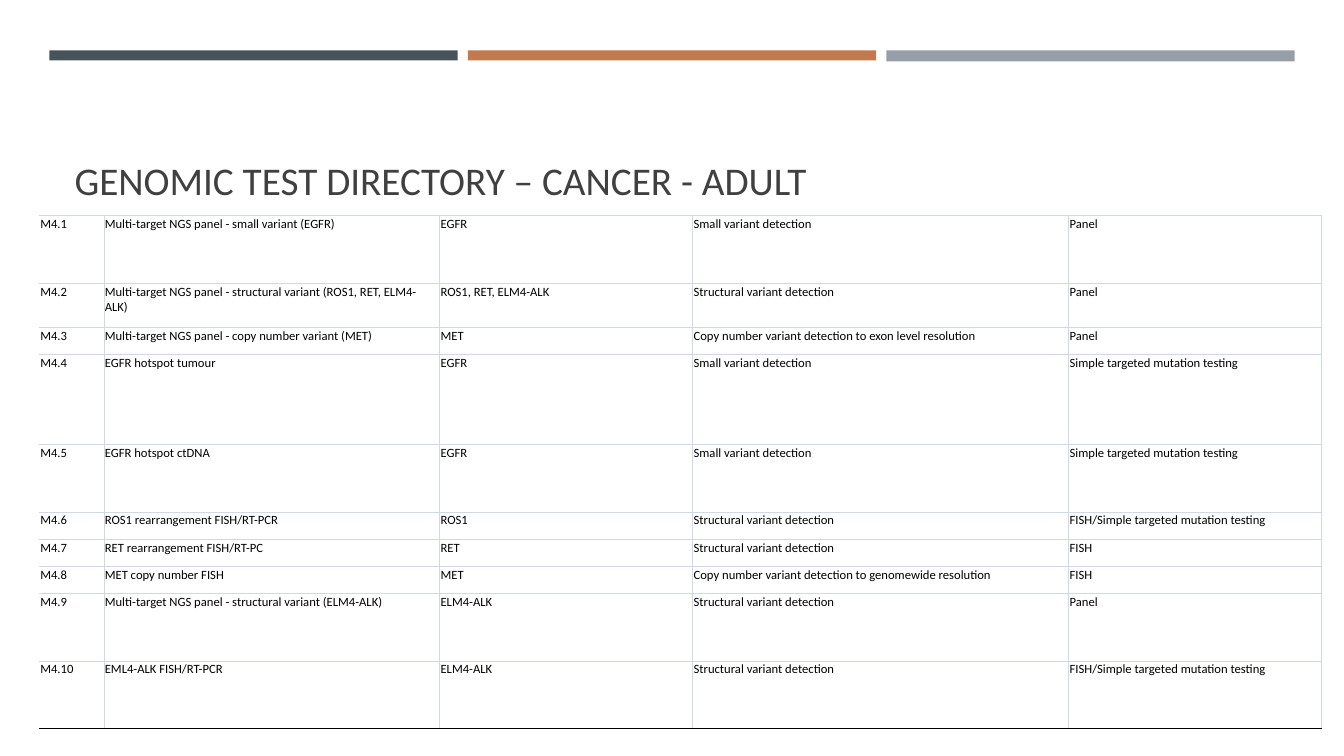
from lxml import etree
from pptx import Presentation
from pptx.dml.color import RGBColor
from pptx.enum.shapes import MSO_SHAPE
from pptx.enum.text import MSO_ANCHOR, PP_ALIGN
from pptx.oxml.ns import qn
from pptx.util import Inches, Pt

SLATE = RGBColor(0x46, 0x53, 0x59)
ORANGE = RGBColor(0xC3, 0x78, 0x4D)
GREY = RGBColor(0x96, 0x9F, 0xA7)
TITLE_GREY = RGBColor(0x40, 0x40, 0x40)
BLACK = RGBColor(0, 0, 0)
GRID_BLUE = RGBColor(0xD0, 0xD7, 0xE5)

NO_STYLE = "{2D5ABB26-0587-4C30-8999-92F81FD0307C}"
BORDER_WIDTH = Pt(0.5)
BAR_WIDTH, BAR_STEP = 4.05, 4.15

COLUMN_WIDTHS = [0.64, 3.33, 2.51, 3.73, 2.51]
ROW_HEIGHTS = [0.67, 0.44, 0.27, 0.89, 0.67, 0.27, 0.27, 0.27, 0.67, 0.67]
SMALL = "Small variant detection"
STRUCTURAL = "Structural variant detection"
COPY_NUMBER = "Copy number variant detection to"
TARGETED = "Simple targeted mutation testing"
TESTS = [
    ("Multi-target NGS panel - small variant (EGFR)", "EGFR", SMALL, "Panel"),
    ("Multi-target NGS panel - structural variant (ROS1, RET, ELM4-ALK)",
     "ROS1, RET, ELM4-ALK", STRUCTURAL, "Panel"),
    ("Multi-target NGS panel - copy number variant (MET)", "MET",
     f"{COPY_NUMBER} exon level resolution", "Panel"),
    ("EGFR hotspot tumour", "EGFR", SMALL, TARGETED),
    ("EGFR hotspot ctDNA", "EGFR", SMALL, TARGETED),
    ("ROS1 rearrangement FISH/RT-PCR", "ROS1", STRUCTURAL, f"FISH/{TARGETED}"),
    ("RET rearrangement FISH/RT-PC", "RET", STRUCTURAL, "FISH"),
    ("MET copy number FISH", "MET", f"{COPY_NUMBER} genomewide resolution", "FISH"),
    ("Multi-target NGS panel - structural variant (ELM4-ALK)", "ELM4-ALK",
     STRUCTURAL, "Panel"),
    ("EML4-ALK FISH/RT-PCR", "ELM4-ALK", STRUCTURAL, f"FISH/{TARGETED}"),
]


def write_text(text_frame, text, size, color, font="Calibri"):
    paragraph = text_frame.paragraphs[0]
    paragraph.alignment = PP_ALIGN.LEFT
    run = paragraph.add_run()
    run.text = text
    run.font.name = font
    run.font.size = Pt(size)
    run.font.color.rgb = color


def set_borders(cell, **colors):
    """Draw the sides L, R, T, B; a side whose colour is None is hidden."""
    properties = cell._tc.get_or_add_tcPr()
    for side in "LRTB":
        line = etree.SubElement(properties, qn(f"a:ln{side}"), w=str(BORDER_WIDTH))
        color = colors[side]
        if color is None:
            etree.SubElement(line, qn("a:noFill"))
        else:
            fill = etree.SubElement(line, qn("a:solidFill"))
            etree.SubElement(fill, qn("a:srgbClr"), val=str(color))


class SlideBuilder:
    def __init__(self, presentation):
        self.slide = presentation.slides.add_slide(presentation.slide_layouts[5])

    def bar(self, left, color, height):
        shape = self.slide.shapes.add_shape(
            MSO_SHAPE.RECTANGLE, Inches(left), Inches(0.5),
            Inches(BAR_WIDTH), Inches(height))
        shape.shadow.inherit = False
        shape.fill.solid()
        shape.fill.fore_color.rgb = color
        shape.line.fill.background()

    def title(self, text):
        title = self.slide.shapes.title
        title.left, title.top = Inches(0.64), Inches(0.77)
        title.width, title.height = Inches(12.06), Inches(1.3)
        title.text_frame.vertical_anchor = MSO_ANCHOR.BOTTOM
        title.text_frame.word_wrap = True
        write_text(title.text_frame, text, 28, TITLE_GREY)

    def table(self, rows):
        table = self.slide.shapes.add_table(
            len(rows), len(COLUMN_WIDTHS), Inches(0.39), Inches(2.14),
            Inches(sum(COLUMN_WIDTHS)), Inches(sum(ROW_HEIGHTS))).table
        table.first_row = table.horz_banding = False
        table._tbl.tblPr.find(qn("a:tableStyleId")).text = NO_STYLE
        for column, width in zip(table.columns, COLUMN_WIDTHS):
            column.width = Inches(width)
        for row, height in zip(table.rows, ROW_HEIGHTS):
            row.height = Inches(height)
        for row_index, texts in enumerate(rows):
            bottom = BLACK if row_index == len(rows) - 1 else GRID_BLUE
            for column_index, text in enumerate(texts):
                cell = table.cell(row_index, column_index)
                cell.margin_left = cell.margin_right = cell.margin_top = Inches(0.01)
                cell.margin_bottom = 0
                cell.vertical_anchor = MSO_ANCHOR.TOP
                set_borders(cell, L=GRID_BLUE if column_index else None,
                            R=GRID_BLUE, T=GRID_BLUE, B=bottom)
                cell.fill.background()
                write_text(cell.text_frame, text, 9, BLACK)


def main():
    presentation = Presentation()
    presentation.slide_width = Inches(13.33)
    presentation.slide_height = Inches(7.5)
    builder = SlideBuilder(presentation)
    for index, (color, height) in enumerate([(SLATE, 0.1), (ORANGE, 0.1), (GREY, 0.11)]):
        builder.bar(0.49 + index * BAR_STEP, color, height)
    builder.title("GENOMIC TEST DIRECTORY – CANCER - ADULT")
    builder.table([(f"M4.{number}", *test) for number, test in enumerate(TESTS, 1)])
    presentation.save("out.pptx")


if __name__ == "__main__":
    main()
